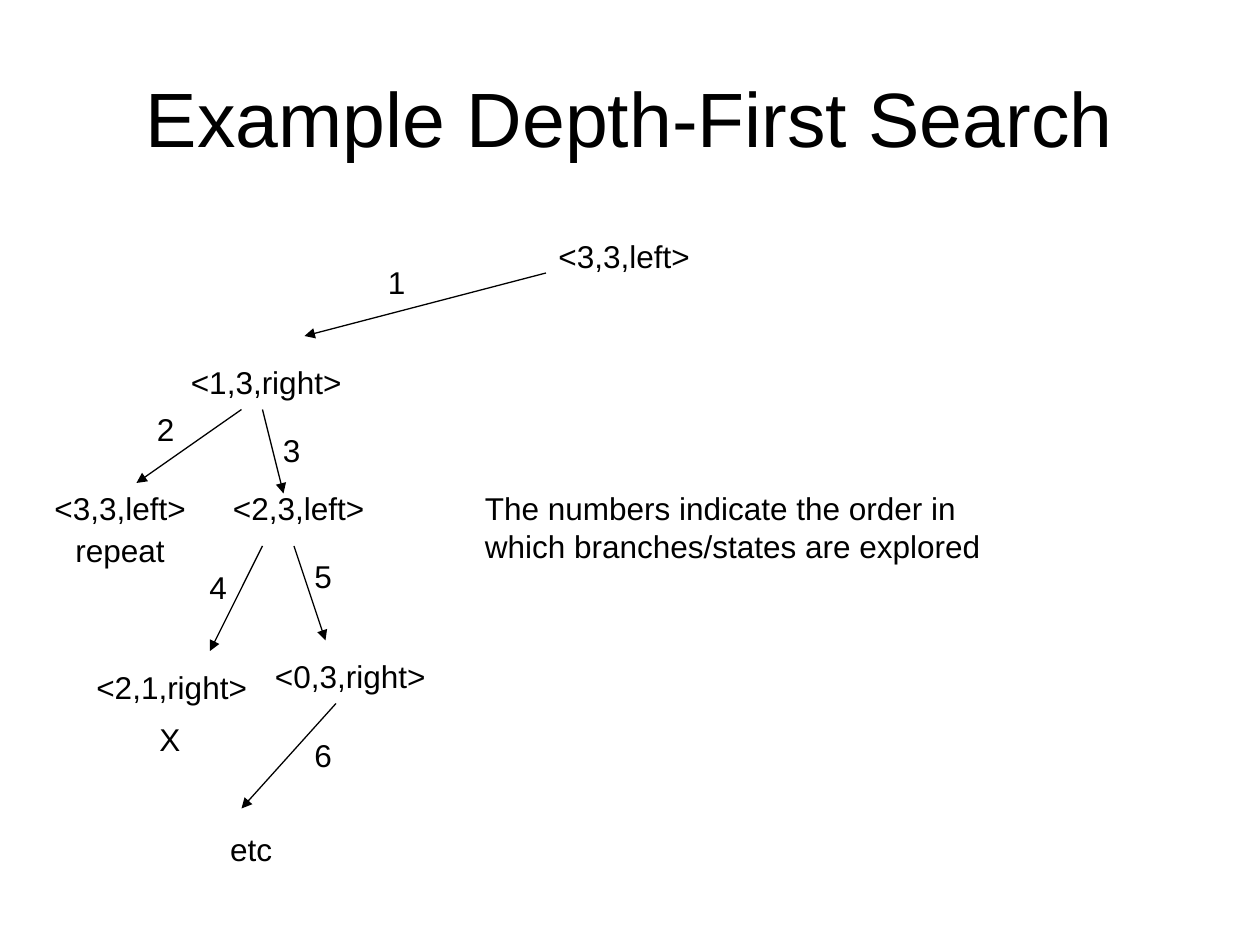
from dataclasses import dataclass

import pptx
import pptx.dml.color
import pptx.enum.shapes
import pptx.enum.text
import pptx.oxml
import pptx.oxml.ns
import pptx.util

COLORS = {"background": "FFFFFF", "ink": "000000"}
FONT = "Arial"
CELL = pptx.util.Inches(1) // 12
LINE_HEIGHT = 0.3
BOX_PADDING = 0.1
STATE_WIDTHS = {"left": 1.25, "right": 1.41}
NUMBER_WIDTH = 0.35


@dataclass(frozen=True)
class Label:
    text: str
    column: float
    row: float
    width: float


@dataclass(frozen=True)
class Branch:
    start: tuple[float, float]
    end: tuple[float, float]
    number: tuple[float, float]


def state(missionaries: int, cannibals: int, bank: str, column: float, row: float) -> Label:
    return Label(f"<{missionaries},{cannibals},{bank}>", column, row, STATE_WIDTHS[bank])


LABELS = [
    state(3, 3, "left", 52, 22),
    state(1, 3, "right", 17, 34),
    state(3, 3, "left", 4, 46),
    state(2, 3, "left", 21, 46),
    state(2, 1, "right", 8, 63),
    state(0, 3, "right", 25, 62),
    Label("repeat", 6, 50, 0.92),
    Label("X", 14, 68, 0.38),
    Label("etc", 20.75, 78.5, 0.56),
    Label("The numbers indicate the order in\nwhich branches/states are explored", 45, 46, 4.2),
]

BRANCHES = [
    Branch((52, 26), (29, 32), (35.75, 24.5)),
    Branch((23, 39), (13, 46), (13.75, 38.5)),
    Branch((25, 39), (27, 47), (25.75, 40.5)),
    Branch((25, 52), (20, 62), (18.75, 53.5)),
    Branch((28, 52), (31, 61), (28.75, 52.5)),
    Branch((32, 67), (23, 77), (28.75, 69.5)),
]


def cells(count: float) -> int:
    return round(count * CELL)


def color(name: str) -> pptx.dml.color.RGBColor:
    return pptx.dml.color.RGBColor.from_string(COLORS[name])


def write(frame, text: str, size: int, alignment) -> None:
    frame.text = text
    for paragraph in frame.paragraphs:
        paragraph.alignment = alignment
        paragraph.font.name = FONT
        paragraph.font.size = pptx.util.Pt(size)
        paragraph.font.color.rgb = color("ink")


def draw_title(slide, text: str) -> None:
    shape = slide.shapes.add_textbox(cells(6), cells(3.6), cells(108), cells(15))
    frame = shape.text_frame
    frame.word_wrap = True
    frame.vertical_anchor = pptx.enum.text.MSO_ANCHOR.MIDDLE
    write(frame, text, 44, pptx.enum.text.PP_ALIGN.CENTER)


def draw_label(slide, label: Label) -> None:
    height = BOX_PADDING + LINE_HEIGHT * len(label.text.splitlines())
    shape = slide.shapes.add_textbox(
        cells(label.column), cells(label.row),
        pptx.util.Inches(label.width), pptx.util.Inches(height),
    )
    frame = shape.text_frame
    frame.word_wrap = False
    frame.auto_size = pptx.enum.text.MSO_AUTO_SIZE.SHAPE_TO_FIT_TEXT
    write(frame, label.text, 18, pptx.enum.text.PP_ALIGN.LEFT)


def draw_branch(slide, branch: Branch, order: int) -> None:
    connector = slide.shapes.add_connector(
        pptx.enum.shapes.MSO_CONNECTOR.STRAIGHT,
        *map(cells, branch.start + branch.end),
    )
    connector.line.color.rgb = color("ink")
    connector.line.width = pptx.util.Pt(0.75)
    arrowhead = pptx.oxml.parse_xml(
        f'<a:tailEnd {pptx.oxml.ns.nsdecls("a")} type="triangle"/>'
    )
    connector.line._get_or_add_ln().append(arrowhead)
    no_effects = pptx.oxml.parse_xml(f'<a:effectLst {pptx.oxml.ns.nsdecls("a")}/>')
    connector._element.spPr.append(no_effects)
    draw_label(slide, Label(str(order), *branch.number, NUMBER_WIDTH))


def main() -> None:
    presentation = pptx.Presentation()
    presentation.slide_width = cells(120)
    presentation.slide_height = cells(90)
    slide = presentation.slides.add_slide(presentation.slide_layouts[6])
    slide.background.fill.solid()
    slide.background.fill.fore_color.rgb = color("background")

    draw_title(slide, "Example Depth-First Search")
    for label in LABELS:
        draw_label(slide, label)
    for order, branch in enumerate(BRANCHES, start=1):
        draw_branch(slide, branch, order)
    presentation.save("out.pptx")


if __name__ == "__main__":
    main()
